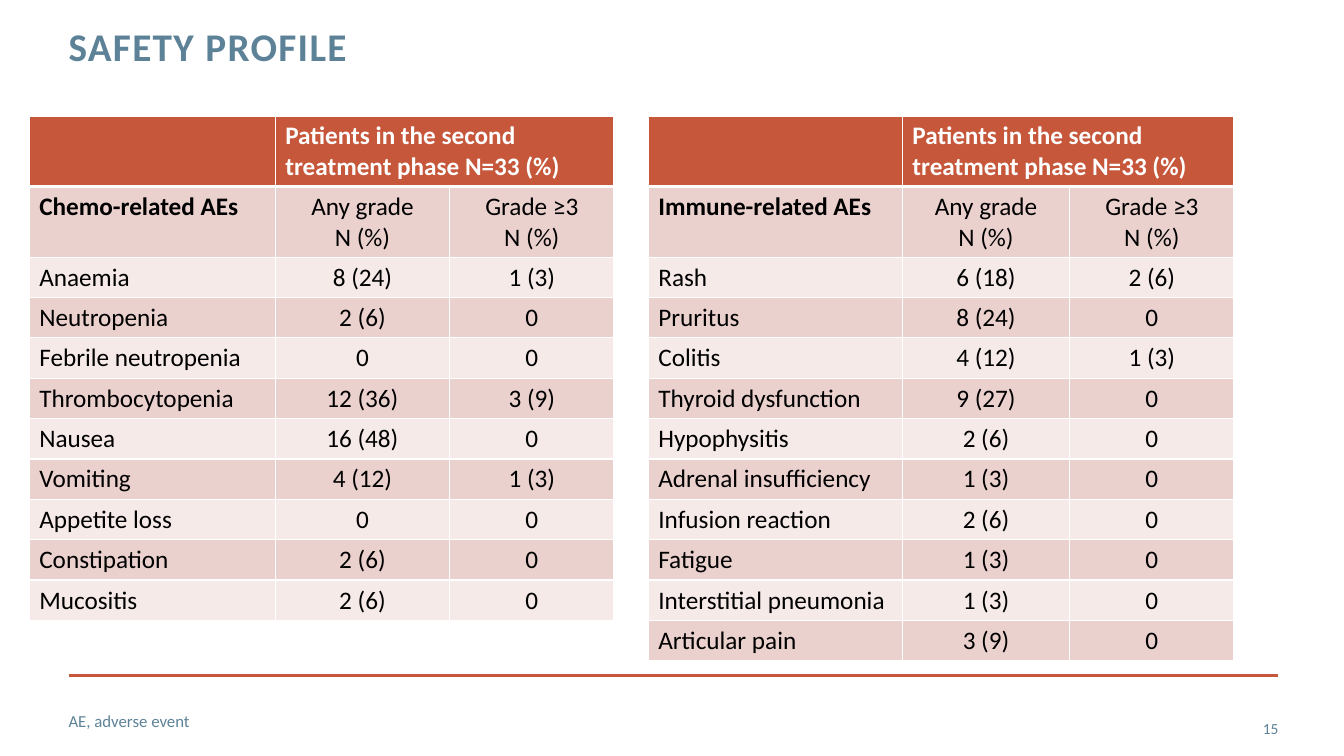
from dataclasses import dataclass

from lxml.etree import SubElement
from pptx import Presentation
from pptx.dml.color import RGBColor
from pptx.enum.shapes import MSO_CONNECTOR
from pptx.enum.text import MSO_ANCHOR, PP_ALIGN
from pptx.oxml import parse_xml
from pptx.oxml.ns import nsdecls, qn
from pptx.util import Pt


@dataclass(frozen=True)
class Theme:
    font: str = "Calibri"
    slate: str = "5D8298"
    rust: str = "C6573B"
    dark: str = "EAD1CE"
    light: str = "F5EAE8"
    white: str = "FFFFFF"
    black: str = "000000"
    title: int = 28
    body: int = 18
    note: int = 12
    page: int = 11


THEME = Theme()
SCALE = 9144
HEAD = "Patients in the second treatment phase N=33 (%)"
GRADES = ["Any grade\nN (%)", "Grade ≥3\nN (%)"]
CHEMO = [
    ("Anaemia", "8 (24)", "1 (3)"),
    ("Neutropenia", "2 (6)", "0"),
    ("Febrile neutropenia", "0", "0"),
    ("Thrombocytopenia", "12 (36)", "3 (9)"),
    ("Nausea", "16 (48)", "0"),
    ("Vomiting", "4 (12)", "1 (3)"),
    ("Appetite loss", "0", "0"),
    ("Constipation", "2 (6)", "0"),
    ("Mucositis", "2 (6)", "0"),
]
IMMUNE = [
    ("Rash", "6 (18)", "2 (6)"),
    ("Pruritus", "8 (24)", "0"),
    ("Colitis", "4 (12)", "1 (3)"),
    ("Thyroid dysfunction", "9 (27)", "0"),
    ("Hypophysitis", "2 (6)", "0"),
    ("Adrenal insufficiency", "1 (3)", "0"),
    ("Infusion reaction", "2 (6)", "0"),
    ("Fatigue", "1 (3)", "0"),
    ("Interstitial pneumonia", "1 (3)", "0"),
    ("Articular pain", "3 (9)", "0"),
]


def px(num):
    return num * SCALE


def style(frame, size, color, bold=False, align=PP_ALIGN.LEFT):
    for para in frame.paragraphs:
        para.alignment = align
        for run in para.runs:
            run.font.name = THEME.font
            run.font.size = Pt(size)
            run.font.bold = bold
            run.font.color.rgb = RGBColor.from_string(color)


def label(slide, box, text, size, bold=False, align=PP_ALIGN.LEFT, anchor=MSO_ANCHOR.MIDDLE):
    frame = slide.shapes.add_textbox(*map(px, box)).text_frame
    frame.word_wrap = True
    frame.margin_left = frame.margin_right = frame.margin_top = frame.margin_bottom = 0
    frame.vertical_anchor = anchor
    frame.text = text
    style(frame, size, THEME.slate, bold, align)
    return frame


def header(slide, box):
    frame = label(slide, box, "SAFETY PROFILE", THEME.title, True, anchor=MSO_ANCHOR.TOP)
    para = frame.paragraphs[0]
    para.line_spacing = Pt(30)
    para.runs[0].font._element.set("spc", "100")


def footer(slide, box):
    left, top, width, height = box
    rule = slide.shapes.add_connector(
        MSO_CONNECTOR.STRAIGHT, px(left), px(top), px(left + width), px(top))
    rule.line.color.rgb = RGBColor.from_string(THEME.rust)
    rule.line.width = Pt(2)
    SubElement(rule._element.spPr, qn("a:effectLst"))
    label(slide, (left, top + 25, 888, 40), "AE, adverse event", THEME.note)
    label(slide, (left + width - 86, top + 33, 86, 40), "15", THEME.page, align=PP_ALIGN.RIGHT)


def border(cell, row):
    props = cell._tc.get_or_add_tcPr()
    wide = {(0, "B"), (1, "T")}
    for spot, side in enumerate("LRTB"):
        width = Pt(3 if (row, side) in wide else 1)
        props.insert(spot, parse_xml(
            f'<a:ln{side} {nsdecls("a")} w="{width}"><a:solidFill>'
            f'<a:srgbClr val="{THEME.white}"/></a:solidFill></a:ln{side}>'))


def grid(slide, box, cols, name, events):
    rows = [("", HEAD, ""), (name, *GRADES), *events]
    table = slide.shapes.add_table(len(rows), len(cols), *map(px, box)).table
    table.horz_banding = False
    for col, width in zip(table.columns, cols):
        col.width = px(width)
    for r, texts in enumerate(rows):
        table.rows[r].height = px(70 if r < 2 else 40)
        fill = THEME.rust if r == 0 else THEME.dark if r % 2 else THEME.light
        for c, text in enumerate(texts):
            cell = table.cell(r, c)
            cell.text = text
            cell.fill.solid()
            cell.fill.fore_color.rgb = RGBColor.from_string(fill)
            border(cell, r)
            style(cell.text_frame, THEME.body,
                  THEME.black if r else THEME.white,
                  r == 0 or (r, c) == (1, 0),
                  PP_ALIGN.CENTER if r and c else PP_ALIGN.LEFT)
    table.cell(0, 1).merge(table.cell(0, 2))


def main():
    deck = Presentation()
    deck.slide_width, deck.slide_height = px(1333), px(750)
    slide = deck.slides.add_slide(deck.slide_layouts[6])
    header(slide, (68, 27, 956, 88))
    grid(slide, (29, 115, 580, 500), (244, 173, 163), "Chemo-related AEs", CHEMO)
    grid(slide, (643, 115, 581, 540), (252, 166, 163), "Immune-related AEs", IMMUNE)
    footer(slide, (68, 670, 1200, 73))
    deck.save("out.pptx")


if __name__ == "__main__":
    main()
